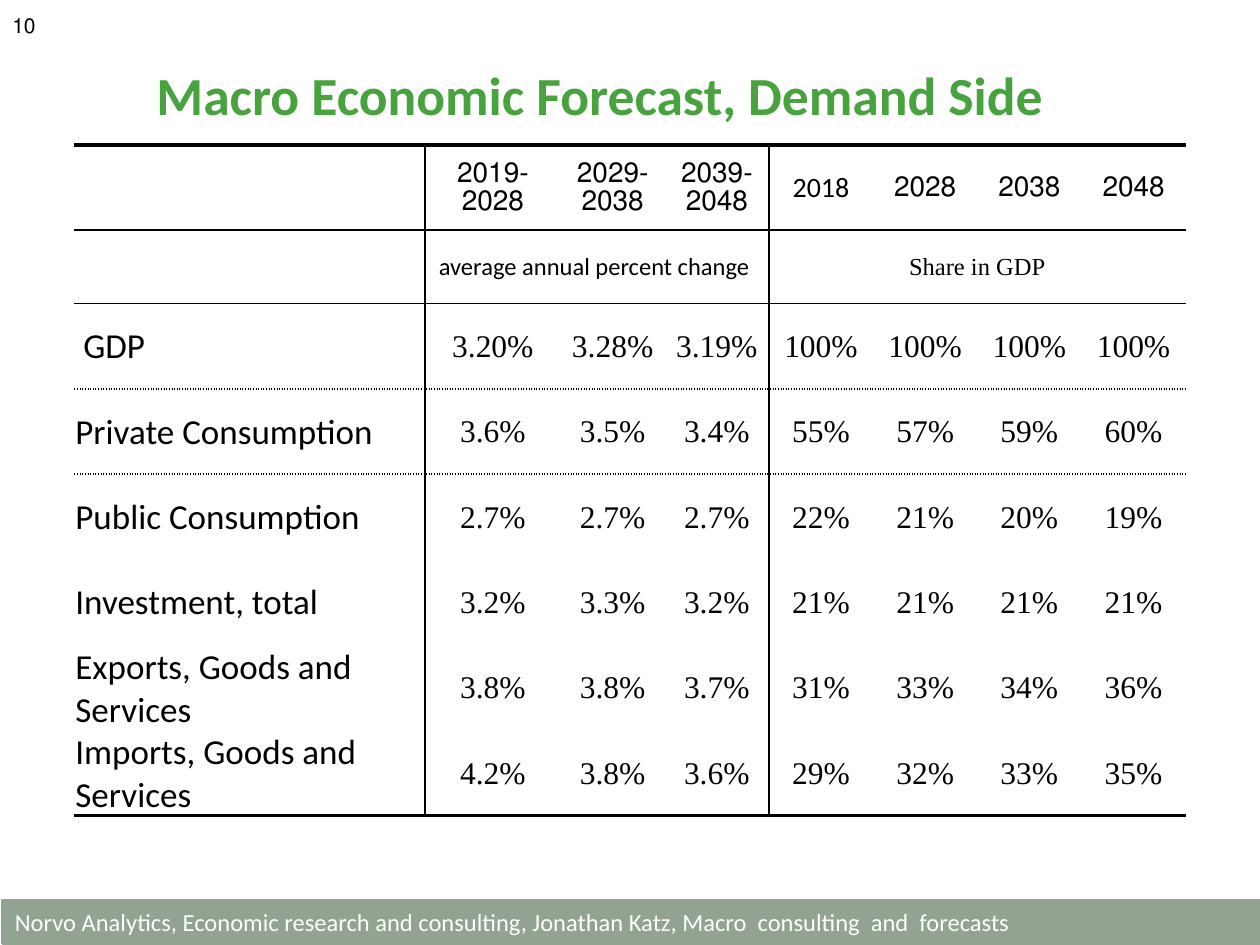
from lxml import etree
from pptx import Presentation
from pptx.dml.color import RGBColor
from pptx.enum.shapes import MSO_SHAPE as Preset
from pptx.enum.text import MSO_ANCHOR as Anchor, PP_ALIGN as Align
from pptx.oxml.ns import qn
from pptx.util import Cm, Pt

# Content
TITLE = "Macro Economic Forecast, Demand Side"
FOOTER = ("Norvo Analytics, Economic research and consulting, Jonathan Katz, "
          "Macro  consulting  and  forecasts")
PAGE = "10"
YEARS = ["", "2019-2028", "2029-2038", "2039-2048", "2018", "2028", "2038", "2048"]
UNITS = ["", "average annual percent change ", "", "", "Share in GDP", "", "", ""]
FORECAST = [
    [" GDP", "3.20%", "3.28%", "3.19%", "100%", "100%", "100%", "100%"],
    ["Private Consumption", "3.6%", "3.5%", "3.4%", "55%", "57%", "59%", "60%"],
    ["Public Consumption", "2.7%", "2.7%", "2.7%", "22%", "21%", "20%", "19%"],
    ["Investment, total", "3.2%", "3.3%", "3.2%", "21%", "21%", "21%", "21%"],
    ["Exports, Goods and Services", "3.8%", "3.8%", "3.7%", "31%", "33%", "34%", "36%"],
    ["Imports, Goods and Services", "4.2%", "3.8%", "3.6%", "29%", "32%", "33%", "35%"],
]
ROWS = [YEARS, UNITS] + FORECAST

# Layout and style
COLUMN_WIDTHS = [7.07, 2.73] + [2.1] * 6
ROW_HEIGHTS = [1.72, 1.48] + [1.72] * 6
GROUP_EDGES = {1, 4}  # columns with a rule on their left
# Horizontal rules by grid line: width in points, dash
RULES = {0: (2.25, "solid"), 1: (1, "solid"), 2: (1, "solid"),
         3: (1, "sysDot"), 4: (1, "sysDot"), len(ROWS): (2.25, "solid")}
SANS, SERIF = "Calibri", "Times New Roman"
BLACK, WHITE, GREEN, SAGE = "000000", "FFFFFF", "48A23E", "92A391"


def color(code):
    return RGBColor.from_string(code)


def write(frame, text, size, font=SANS, code=BLACK, align=Align.LEFT,
          bold=False, rtl=False):
    frame.text = text
    frame.word_wrap = True
    paragraph = frame.paragraphs[0]
    paragraph.alignment = align
    if rtl:
        paragraph._p.get_or_add_pPr().set("rtl", "1")
    for run in paragraph.runs:
        run.font.size, run.font.name, run.font.bold = Pt(size), font, bold
        run.font.color.rgb = color(code)


def add_border(cell, side, rule):
    line = etree.SubElement(cell._tc.get_or_add_tcPr(), qn(f"a:ln{side}"))
    if rule is None:
        line.set("w", "0")
        etree.SubElement(line, qn("a:noFill"))
        return
    width, dash = rule
    line.set("w", str(Pt(width)))
    fill = etree.SubElement(line, qn("a:solidFill"))
    etree.SubElement(fill, qn("a:srgbClr"), val=BLACK)
    etree.SubElement(line, qn("a:prstDash"), val=dash)


def cell_style(row, column):
    """Size, font, alignment and direction of the text in a cell."""
    if row == 0:
        return dict(size=16, align=Align.CENTER, rtl=column != 4)
    if row == 1:
        return dict(size=14, font=SANS if column < 4 else SERIF, align=Align.CENTER)
    if column == 0:
        return dict(size=20)
    return dict(size=18, font=SERIF, align=Align.CENTER)


def add_forecast_table(slide):
    table = slide.shapes.add_table(
        len(ROWS), len(YEARS), Cm(1.5), Cm(2.92),
        Cm(sum(COLUMN_WIDTHS)), Cm(sum(ROW_HEIGHTS))).table
    table.first_row = table.horz_banding = False
    for column, width in zip(table.columns, COLUMN_WIDTHS):
        column.width = Cm(width)
    for row, height in zip(table.rows, ROW_HEIGHTS):
        row.height = Cm(height)

    for r, values in enumerate(ROWS):
        for c, value in enumerate(values):
            cell = table.cell(r, c)
            cell.margin_left = cell.margin_right = cell.margin_top = Cm(0.02)
            cell.margin_bottom = 0
            cell.vertical_anchor = Anchor.MIDDLE
            if value:
                write(cell.text_frame, value, **cell_style(r, c))
            upright = (1, "solid")
            add_border(cell, "L", upright if c in GROUP_EDGES else None)
            add_border(cell, "R", upright if c + 1 in GROUP_EDGES else None)
            add_border(cell, "T", RULES.get(r))
            add_border(cell, "B", RULES.get(r + 1))
            cell.fill.background()

    # Unit captions span their column groups
    table.cell(1, 1).merge(table.cell(1, 3))
    table.cell(1, 4).merge(table.cell(1, 7))


def main():
    deck = Presentation()
    deck.slide_width, deck.slide_height = Cm(25.4), Cm(19.05)
    slide = deck.slides.add_slide(deck.slide_layouts[5])

    # Title
    title = slide.shapes.title
    title.left, title.top, title.width, title.height = Cm(2.9), Cm(0.38), Cm(20.32), Cm(3.05)
    write(title.text_frame, TITLE, 30.6, code=GREEN, bold=True)
    title.text_frame.vertical_anchor = Anchor.MIDDLE

    # Footer band
    footer = slide.shapes.add_shape(Preset.RECTANGLE, Cm(0.05), Cm(18.16), Cm(25.43), Cm(0.86))
    footer.shadow.inherit = False
    footer.fill.solid()
    footer.fill.fore_color.rgb = footer.line.color.rgb = color(SAGE)
    footer.line.width = Pt(2)
    write(footer.text_frame, FOOTER, 14, code=WHITE)
    footer.text_frame.vertical_anchor = Anchor.MIDDLE

    # Page number
    page = slide.shapes.add_textbox(0, 0, Cm(5.92), Cm(1.02))
    write(page.text_frame, PAGE, 12, rtl=True)
    page.text_frame.vertical_anchor = Anchor.MIDDLE

    add_forecast_table(slide)
    deck.save("out.pptx")


if __name__ == "__main__":
    main()
